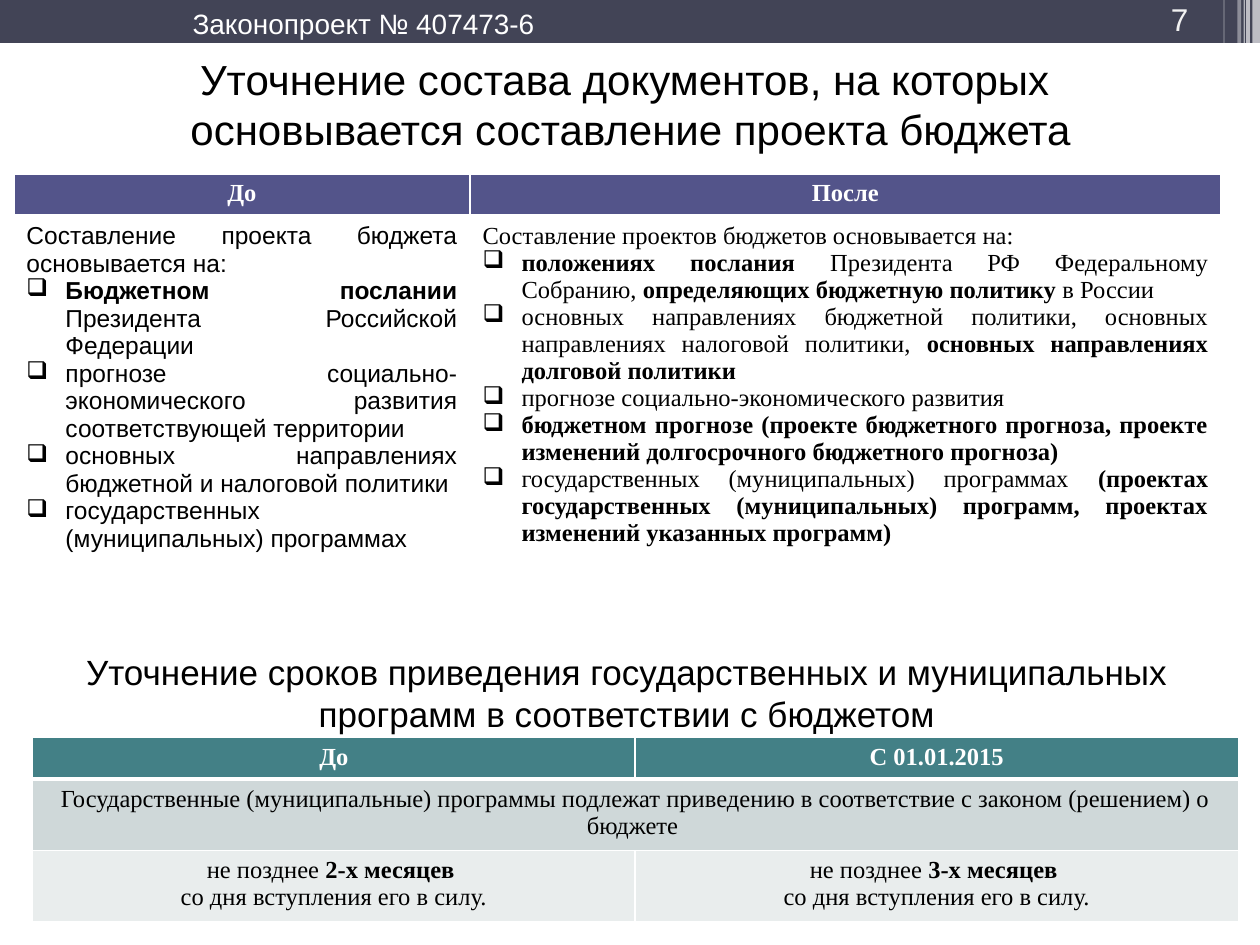
from lxml.etree import SubElement
from pptx import Presentation
from pptx.dml.color import RGBColor
from pptx.enum.shapes import MSO_SHAPE
from pptx.enum.text import MSO_ANCHOR, PP_ALIGN
from pptx.oxml.ns import qn
from pptx.util import Emu, Pt

SCALE = 9144  # 100 px to the inch
SANS, SERIF = "Arial", "Times New Roman"
WHITE, BLACK = "FFFFFF", "000000"
MARK = "❑"
LEFT, MID, RIGHT, JUST = PP_ALIGN.LEFT, PP_ALIGN.CENTER, PP_ALIGN.RIGHT, PP_ALIGN.JUSTIFY

BEFORE = [
    "Составление проекта бюджета основывается на:",
    "❑**Бюджетном послании **Президента Российской Федерации",
    "❑прогнозе социально-экономического развития соответствующей территории",
    "❑основных направлениях бюджетной и налоговой политики",
    "❑государственных (муниципальных) программах",
]
AFTER = [
    "Составление проектов бюджетов основывается на:",
    "❑**положениях послания** Президента РФ Федеральному Собранию, "
    "**определяющих бюджетную политику** в России",
    "❑основных направлениях бюджетной политики, основных направлениях "
    "налоговой политики, **основных направлениях долговой политики**",
    "❑прогнозе социально-экономического развития",
    "❑**бюджетном прогнозе (проекте бюджетного прогноза, проекте "
    "изменений долгосрочного бюджетного прогноза) **",
    "❑государственных (муниципальных) программах **(проектах государственных "
    "(муниципальных) программ, проектах изменений указанных программ)**",
]
RULE = ["Государственные (муниципальные) программы подлежат приведению "
        "в соответствие с законом (решением) о бюджете "]


def px(n):
    return Emu(n * SCALE)


def color(code):
    return RGBColor.from_string(code)


def bullet(para):
    props = para._p.get_or_add_pPr()
    props.set("marL", str(px(31)))
    props.set("indent", str(px(-31)))
    SubElement(props, qn("a:buChar")).set("char", MARK)


def write(frame, lines, size, font, ink, align):
    """Fill a frame; ** switches bold, a leading mark makes a bullet."""
    frame.word_wrap = True
    for i, line in enumerate(lines):
        para = frame.add_paragraph() if i else frame.paragraphs[0]
        para.alignment = align
        if line.startswith(MARK):
            bullet(para)
        for j, part in enumerate(line.removeprefix(MARK).split("**")):
            if part:
                run = para.add_run()
                run.text = part
                run.font.size, run.font.name = Pt(size), font
                run.font.bold = j % 2 == 1
                run.font.color.rgb = color(ink)


def label(slide, box, lines, size, ink=BLACK, align=MID, anchor=MSO_ANCHOR.MIDDLE):
    frame = slide.shapes.add_textbox(*map(px, box)).text_frame
    frame.vertical_anchor = anchor
    write(frame, lines, size, SANS, ink, align)


def block(slide, box, fill, alpha=100):
    shape = slide.shapes.add_shape(MSO_SHAPE.RECTANGLE, *map(px, box))
    shape.shadow.inherit = False
    shape.line.fill.background()
    shape.fill.solid()
    shape.fill.fore_color.rgb = color(fill)
    if alpha < 100:
        tone = shape.fill._xPr.find(qn("a:solidFill"))[0]
        SubElement(tone, qn("a:alpha")).set("val", str(alpha * 1000))


def grid(slide, box, cols, rows):
    left, top, wide, high = box
    table = slide.shapes.add_table(len(rows), len(cols), *map(px, box)).table
    table.first_row = table.horz_banding = False
    for col, size in zip(table.columns, cols):
        col.width = px(size)
    for row, size in zip(table.rows, rows):
        row.height = px(size)
    return table


def paint(cell, lines, fill=None, font=SERIF, ink=BLACK, align=MID, base=1):
    """Style one cell: white borders, then fill, then text."""
    props = cell._tc.get_or_add_tcPr()
    for side, width in zip("LRTB", (1, 1, 1, base)):
        line = SubElement(props, qn(f"a:ln{side}"), w=str(Pt(width)))
        tone = SubElement(line, qn("a:solidFill"))
        SubElement(tone, qn("a:srgbClr")).set("val", WHITE)
    if fill:
        cell.fill.solid()
        cell.fill.fore_color.rgb = color(fill)
    else:
        cell.fill.background()
    write(cell.text_frame, lines, 14, font, ink, align)


def heads(table, names, fill):
    for i, name in enumerate(names):
        paint(table.cell(0, i), [f"**{name}**"], fill, ink=WHITE, base=3)


def banner(slide, box):
    left, top, wide, high = box
    block(slide, box, "424456")
    # Pale stripes: offset from the right edge, width, height, opacity
    for back, size, tall, alpha in ((6, 6, 68, 65), (11, 3, 68, 65), (13, 1, 68, 60),
                                    (18, 3, 68, 40), (29, 1, 64, 30)):
        block(slide, (left + wide - back, top, size, tall), WHITE, alpha)
    label(slide, (left + 143, top, 301, 37), ["Законопроект № 407473-6"], 16,
          WHITE, LEFT, MSO_ANCHOR.TOP)
    label(slide, (left + 874, top + 2, 79, 33), ["7"], 18,
          "F2F2F2", RIGHT, MSO_ANCHOR.BOTTOM)


def sources(slide, box):
    left, top, wide, high = box
    label(slide, (left + 13, top, 953, 63),
          ["Уточнение состава документов, на которых ",
           "основывается составление проекта бюджета"], 24)
    table = grid(slide, (left, top + 87, wide, high - 87), (362, wide - 362),
                 (31, high - 118))
    heads(table, ("До", "После"), "53548A")
    paint(table.cell(1, 0), BEFORE, font=SANS, align=JUST)
    paint(table.cell(1, 1), AFTER, align=JUST)


def terms(slide, box):
    left, top, wide, high = box
    label(slide, (left - 7, top, wide, 71),
          ["Уточнение сроков приведения государственных и муниципальных "
           "программ в соответствии с бюджетом"], 20)
    half = wide // 2
    table = grid(slide, (left, top + 71, wide, high - 71), (half, wide - half),
                 (31, 53, 53))
    heads(table, ("До", "С 01.01.2015"), "438086")
    table.cell(1, 0).merge(table.cell(1, 1))
    paint(table.cell(1, 0), RULE, "CFD8D9")
    for i, count in enumerate((2, 3)):
        paint(table.cell(2, i), [f"не позднее **{count}-х месяцев **",
                                 "со дня вступления его в силу."], "E9EDED")


def main():
    deck = Presentation()
    deck.slide_width, deck.slide_height = px(1000), px(750)
    slide = deck.slides.add_slide(deck.slide_layouts[6])
    banner(slide, (0, 0, 1000, 34))
    sources(slide, (11, 51, 958, 457))
    terms(slide, (26, 514, 957, 208))
    deck.save("out.pptx")


if __name__ == "__main__":
    main()
